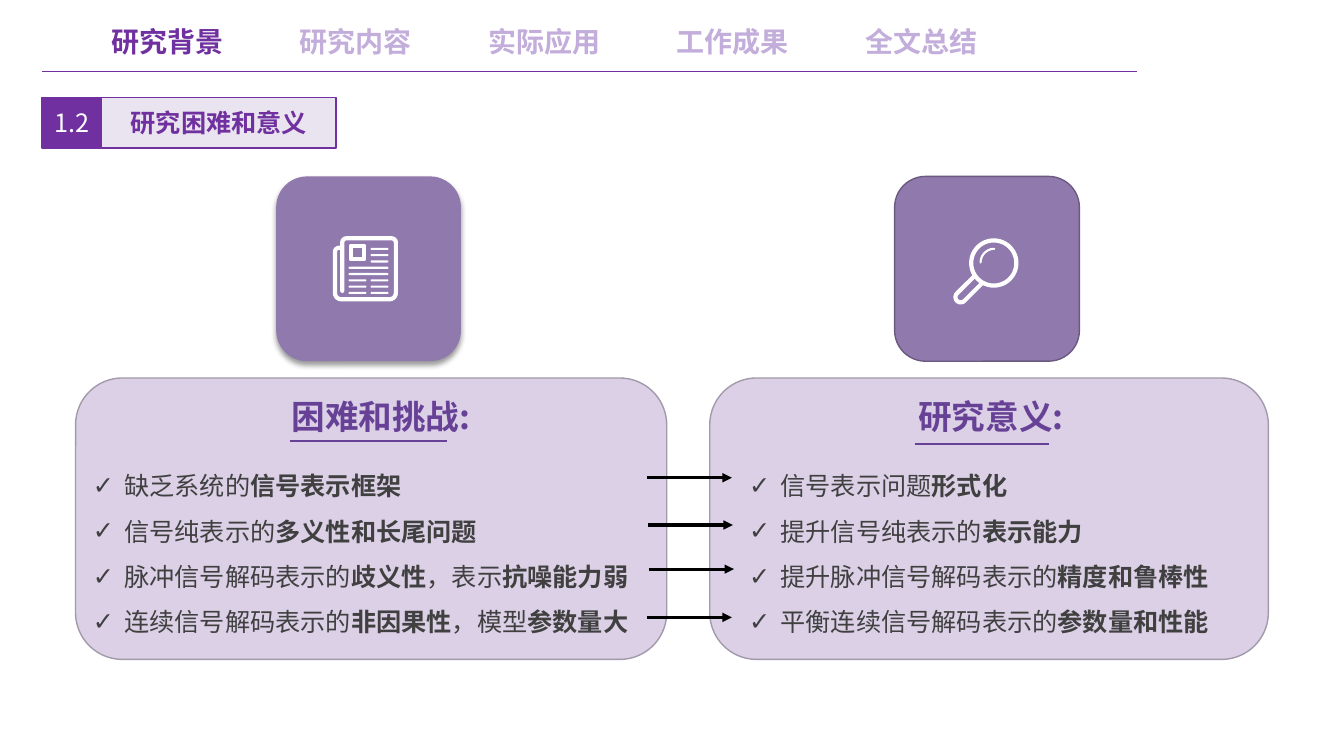
"""Build the slide on research difficulties and significance."""
from dataclasses import dataclass
from math import cos, radians, sin
from typing import Optional

from lxml.etree import SubElement
from pptx import Presentation
from pptx.dml.color import RGBColor
from pptx.enum.shapes import MSO_CONNECTOR as Connector, MSO_SHAPE as Preset
from pptx.enum.text import MSO_ANCHOR as Anchor, MSO_AUTO_SIZE as AutoSize, PP_ALIGN as Align
from pptx.oxml.ns import qn
from pptx.util import Emu, Pt

PX = 9525
COLORS = {
    "purple": "7030A0", "faded": "C2ADDB", "badge": "E9E4EF", "panel": "DBD0E6",
    "panel_edge": "A29AAA", "heading": "674196", "body": "404040", "tile": "9079AD",
    "tile_edge": "6B5A80", "white": "FFFFFF", "black": "000000",
}
CJK = "Noto Sans CJK SC"
Point = tuple[float, float]
Frame = tuple[int, int, int, int]


@dataclass(frozen=True)
class Panel:
    frame: Frame
    heading: str
    heading_frame: Frame
    underline: Frame
    list_frame: Frame
    items: tuple[str, ...]


TABS = ("研究背景", "研究内容", "实际应用", "工作成果", "全文总结")
PANELS = (
    Panel((72, 360, 563, 268), "困难和挑战:", (258, 372, 189, 48), (276, 420, 426, 420),
          (79, 429, 550, 179),
          ("缺乏系统的*信号表示框架", "信号纯表示的*多义性和长尾问题",
           "脉冲信号解码表示的*歧义性*，表示*抗噪能力弱",
           "连续信号解码表示的*非因果性*，模型*参数量大")),
    Panel((676, 360, 532, 268), "研究意义:", (855, 372, 157, 48), (871, 423, 999, 423),
          (704, 429, 532, 179),
          ("信号表示问题*形式化", "提升信号纯表示的*表示能力",
           "提升脉冲信号解码表示的*精度和鲁棒性",
           "平衡连续信号解码表示的*参数量和性能")),
)
ARROW_STARTS = ((616, 455), (617, 500), (618, 542), (616, 588))
ARROW_LENGTH = 81


def color(name: str) -> RGBColor:
    return RGBColor.from_string(COLORS[name])


def paint(shape, fill: Optional[str], line: Optional[str], weight: float = 1) -> None:
    shape.shadow.inherit = False
    if fill:
        shape.fill.solid()
        shape.fill.fore_color.rgb = color(fill)
    else:
        shape.fill.background()
    if line:
        shape.line.color.rgb = color(line)
        shape.line.width = Pt(weight)
    else:
        shape.line.fill.background()


def add_preset(page, preset, frame: Frame, fill: Optional[str] = None,
               line: Optional[str] = None, weight: float = 1):
    shape = page.shapes.add_shape(preset, *(Emu(n * PX) for n in frame))
    paint(shape, fill, line, weight)
    return shape


def add_line(page, ends: Frame, ink: str, weight: float, arrow: bool = False) -> None:
    line = page.shapes.add_connector(Connector.STRAIGHT, *(Emu(n * PX) for n in ends))
    line.line.color.rgb = color(ink)
    line.line.width = Pt(weight)
    if arrow:
        SubElement(line.line._get_or_add_ln(), qn("a:tailEnd"), type="triangle")
    SubElement(line._element.spPr, qn("a:effectLst"))


def add_stroke(page, points: list[Point], weight: float) -> None:
    start, *rest = [(round(x * PX), round(y * PX)) for x, y in points]
    builder = page.shapes.build_freeform(*start)
    builder.add_line_segments(rest, close=False)
    stroke = builder.convert_to_shape()
    paint(stroke, None, "white", weight)
    stroke.line._get_or_add_ln().set("cap", "rnd")


def arc(x: int, y: int, radius: int, start: int, end: int) -> list[Point]:
    angles = [radians(start + (end - start) * step / 12) for step in range(13)]
    return [(x + radius * cos(a), y + radius * sin(a)) for a in angles]


def write(para, text: str, *, size: int, ink: str, font: str = CJK, bold: bool = False) -> None:
    span = para.add_run()
    span.text = text
    span.font.size = Pt(size)
    span.font.bold = bold
    span.font.color.rgb = color(ink)
    span.font.name = font
    SubElement(span.font._element, qn("a:ea"), typeface=font)


def add_box(page, frame: Frame, wrap: bool = False):
    box = page.shapes.add_textbox(*(Emu(n * PX) for n in frame)).text_frame
    box.word_wrap = wrap
    box.auto_size = AutoSize.SHAPE_TO_FIT_TEXT
    return box


def add_label(page, frame: Frame, text: str, fill: str, ink: str, bold: bool) -> None:
    label = add_preset(page, Preset.RECTANGLE, frame, fill, "purple")
    label.text_frame.vertical_anchor = Anchor.MIDDLE
    para = label.text_frame.paragraphs[0]
    para.alignment = Align.CENTER
    write(para, text, size=18, ink=ink, bold=bold)


def add_panel_text(page, panel: Panel) -> None:
    box = add_box(page, panel.list_frame, wrap=True)
    for index, item in enumerate(panel.items):
        para = box.add_paragraph() if index else box.paragraphs[0]
        para.line_spacing = 1.5
        layout = para._p.get_or_add_pPr()
        layout.set("marL", str(30 * PX))
        layout.set("indent", str(-30 * PX))
        SubElement(layout, qn("a:buFont"), typeface="Arial")
        SubElement(layout, qn("a:buChar"), char="✓")
        for part, text in enumerate(item.split("*")):
            write(para, text, size=18, ink="body", font="Arial", bold=part % 2 == 1)
    para = add_box(page, panel.heading_frame).paragraphs[0]
    para.alignment = Align.RIGHT
    write(para, panel.heading, size=24, ink="heading", bold=True)
    add_line(page, panel.underline, "heading", 1.5)


def add_newspaper(page) -> None:
    tile = add_preset(page, Preset.ROUNDED_RECTANGLE, (263, 168, 176, 176), "tile")
    effects = tile._element.spPr.find(qn("a:effectLst"))
    shadow = SubElement(effects, qn("a:outerShdw"), blurRad=str(Pt(4)), dist=str(Pt(3)),
                        dir="5400000", algn="t", rotWithShape="0")
    tint = SubElement(shadow, qn("a:srgbClr"), val=COLORS["black"])
    SubElement(tint, qn("a:alpha"), val="40000")
    add_stroke(page, [(326, 277), *arc(330, 231, 4, 180, 270), *arc(373, 231, 4, 270, 360),
                      *arc(371, 279, 6, 0, 90), *arc(325, 279, 6, 90, 180),
                      *arc(323, 240, 4, 180, 270), (326, 236)], 3)
    left, right, full = (332, 17), (353, 17), (332, 38)
    rows = [(right,)] * 3 + [(full,)] * 2 + [(left, right)] * 3
    for row, bars in enumerate(rows):
        for x, width in bars:
            bar = add_preset(page, Preset.ROUNDED_RECTANGLE,
                             (x, 236 + 6 * row, width, 2), "white")
            bar.adjustments[0] = 0.5
    add_preset(page, Preset.RECTANGLE, (334, 234, 13, 13), None, "white", 3)


def add_magnifier(page) -> None:
    add_preset(page, Preset.ROUNDED_RECTANGLE, (852, 168, 176, 176), "tile", "tile_edge")
    add_preset(page, Preset.OVAL, (925, 229, 43, 43), None, "white", 3)
    add_stroke(page, [(928, 263), *arc(915, 283, 5, 225, 45), (935, 270)], 3)
    add_stroke(page, arc(947, 250, 13, 180, 270), 1.5)


def main() -> None:
    deck = Presentation()
    deck.slide_width, deck.slide_height = Emu(1280 * PX), Emu(720 * PX)
    page = deck.slides.add_slide(deck.slide_layouts[6])
    for panel in reversed(PANELS):
        add_preset(page, Preset.ROUNDED_RECTANGLE, panel.frame, "panel", "panel_edge")
    add_line(page, (40, 68, 1083, 68), "purple", 1)
    for index, tab in enumerate(TABS):
        box = add_box(page, (97 + index * 359 // 2, 19, 127, 42))
        write(box.paragraphs[0], tab, size=20, ink="faded" if index else "purple", bold=True)
    add_label(page, (40, 93, 57, 48), "1.2", "purple", "white", False)
    add_label(page, (97, 93, 223, 48), "研究困难和意义", "badge", "purple", True)
    for panel in PANELS:
        add_panel_text(page, panel)
    add_newspaper(page)
    add_magnifier(page)
    for x, y in ARROW_STARTS:
        add_line(page, (x, y, x + ARROW_LENGTH, y), "black", 2.25, arrow=True)
    deck.save("out.pptx")


if __name__ == "__main__":
    main()
